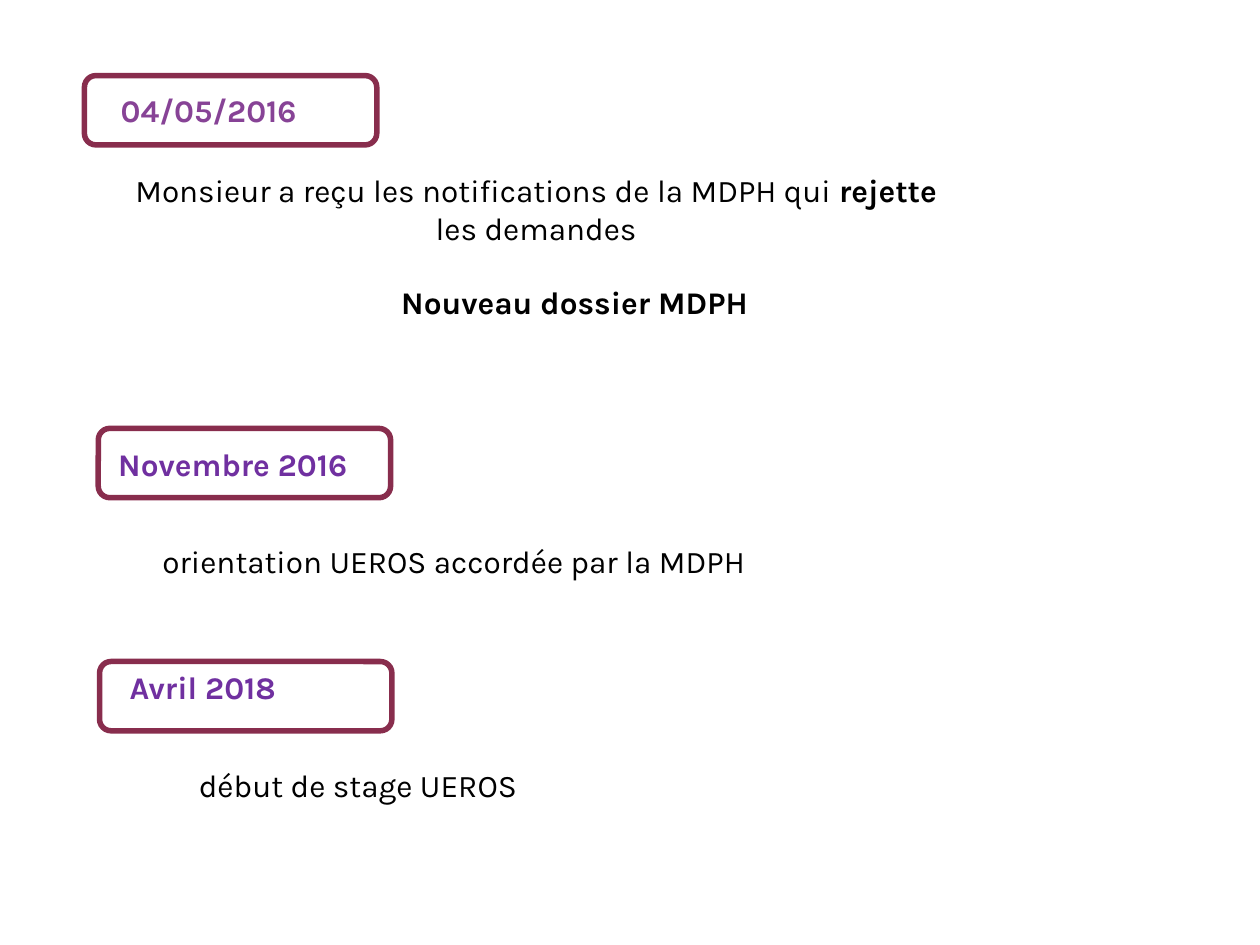
"""Build a slide of dated steps in a disability support application."""
from dataclasses import dataclass

from pptx import Presentation
from pptx.dml.color import RGBColor
from pptx.enum.shapes import MSO_SHAPE
from pptx.enum.text import PP_ALIGN
from pptx.util import Inches, Pt

ROUNDED = MSO_SHAPE.ROUNDED_RECTANGLE
LEFT, CENTER = PP_ALIGN.LEFT, PP_ALIGN.CENTER
COLORS = {"frame": "882D4D", "plum": "874396", "violet": "7030A0", "black": "000000"}
COLUMNS, ROWS = 100, 75
SLIDE_WIDTH, SLIDE_HEIGHT = Inches(10), Inches(7.5)
BADGE_WIDTH, BADGE_HEIGHT = 23.2, 5.5
LINE_HEIGHT = 4


@dataclass(frozen=True)
class Label:
    runs: tuple[tuple[str, bool], ...]
    column: float
    row: float
    columns: float
    rows: float = LINE_HEIGHT
    color: str = "black"
    align: PP_ALIGN = LEFT


@dataclass(frozen=True)
class Badge:
    column: float
    row: float
    label: Label


BADGES = (
    Badge(6.7, 6, Label((("04/05/2016", True),), 8.6, 6.7, 19.3, color="plum")),
    Badge(7.8, 34, Label((("Novembre 2016", True),), 8.4, 34.8, 27, color="violet")),
    Badge(7.9, 52.5, Label((("Avril 2018", True),), 9.3, 52.5, 17.5, color="violet")),
)
EVENTS = (
    Label((("Monsieur a reçu les notifications de la MDPH qui ", False),
           ("rejette", True), (" les demandes", False)),
          8.3, 13.1, 68.5, 7.1, align=CENTER),
    Label((("Nouveau dossier MDPH", True),), 19.2, 22, 52.8, align=CENTER),
    Label((("orientation UEROS accordée par la MDPH", False),), 11.9, 42.5, 49.9),
    Label((("début de stage UEROS", False),), 14.8, 60.3, 42.3),
)


def place(column: float, row: float, columns: float, rows: float) -> tuple[int, ...]:
    column_width, row_height = SLIDE_WIDTH / COLUMNS, SLIDE_HEIGHT / ROWS
    return (round(column * column_width), round(row * row_height),
            round(columns * column_width), round(rows * row_height))


def draw_label(shapes, label: Label) -> None:
    box = shapes.add_textbox(*place(label.column, label.row, label.columns, label.rows))
    box.text_frame.word_wrap = True
    paragraph = box.text_frame.paragraphs[0]
    paragraph.alignment = label.align
    paragraph.font.name = "Karla"
    paragraph.font.size = Pt(18)
    paragraph.font.color.rgb = RGBColor.from_string(COLORS[label.color])
    for text, bold in label.runs:
        run = paragraph.add_run()
        run.text = text
        run.font.bold = bold


def draw_badge(slide, badge: Badge) -> None:
    shapes = slide.shapes.add_group_shape().shapes
    frame = shapes.add_shape(
        ROUNDED, *place(badge.column, badge.row, BADGE_WIDTH, BADGE_HEIGHT))
    frame.shadow.inherit = False
    frame.fill.background()
    frame.line.color.rgb = RGBColor.from_string(COLORS["frame"])
    frame.line.width = Pt(3.15)
    draw_label(shapes, badge.label)


def main() -> None:
    presentation = Presentation()
    presentation.slide_width, presentation.slide_height = SLIDE_WIDTH, SLIDE_HEIGHT
    slide = presentation.slides.add_slide(presentation.slide_layouts[6])
    for badge in BADGES:
        draw_badge(slide, badge)
    for event in EVENTS:
        draw_label(slide.shapes, event)
    presentation.save("out.pptx")


if __name__ == "__main__":
    main()
